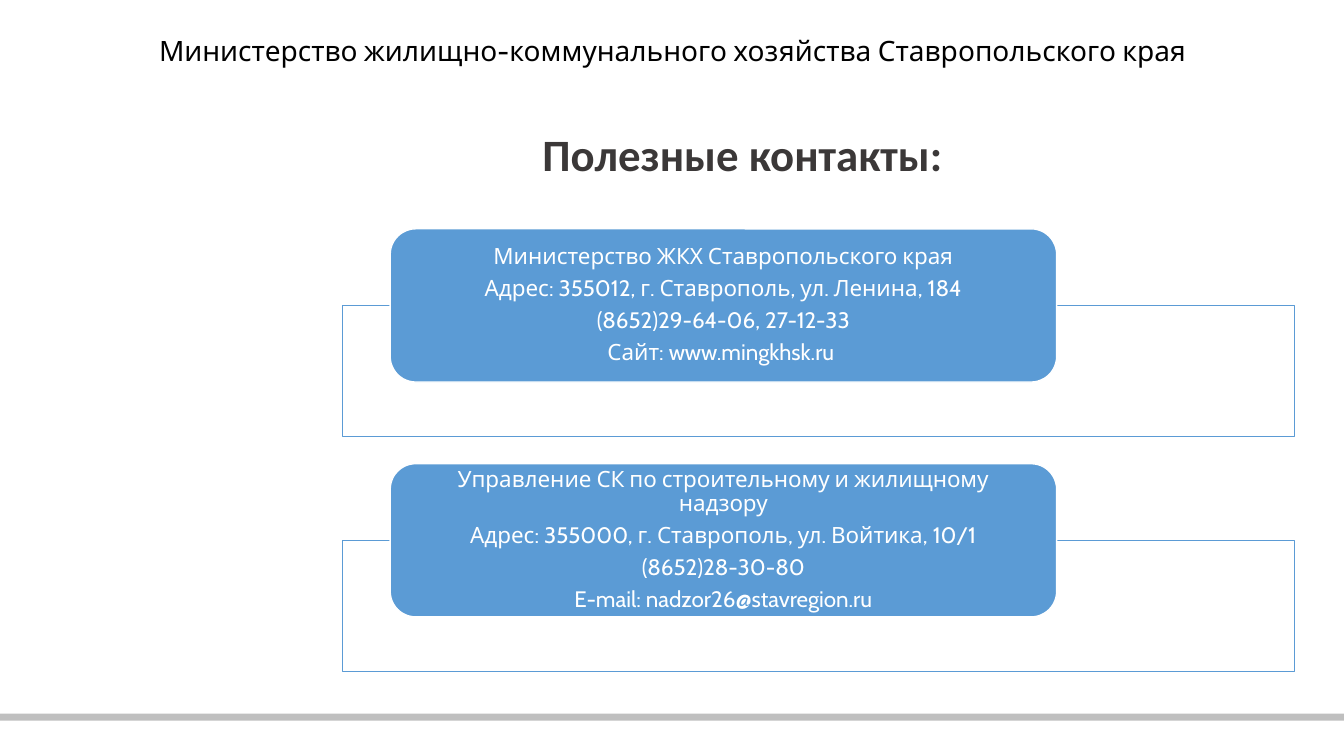
from lxml import etree
from pptx import Presentation
from pptx.dml.color import RGBColor
from pptx.enum import shapes as kinds, text as txt
from pptx.oxml.ns import qn
from pptx.util import Inches, Pt

BLACK = RGBColor(0x00, 0x00, 0x00)
WHITE = RGBColor(0xFF, 0xFF, 0xFF)
BLUE = RGBColor(0x5B, 0x9B, 0xD5)
GREY = RGBColor(0xBF, 0xBF, 0xBF)
DARK = RGBColor(0x3B, 0x38, 0x38)
RECT = kinds.MSO_SHAPE.RECTANGLE
ROUND = kinds.MSO_SHAPE.ROUNDED_RECTANGLE

CARDS = [
    ["Министерство ЖКХ Ставропольского края",
     "Адрес: 355012, г. Ставрополь, ул. Ленина, 184",
     "(8652)29-64-06, 27-12-33",
     "Сайт: www.mingkhsk.ru "],
    ["Управление СК по строительному и жилищному надзору",
     "Адрес: 355000, г. Ставрополь, ул. Войтика, 10/1",
     "(8652)28-30-80",
     "E-mail: nadzor26@stavregion.ru"],
]
TOP = 2.27
STEP = 2.33


def add_line(par, words, font, size, color, bold=False):
    par.alignment = txt.PP_ALIGN.CENTER
    run = par.add_run()
    run.text = words
    run.font.name = font
    run.font.size = Pt(size)
    run.font.bold = bold
    run.font.color.rgb = color


def add_title(slide, box, words, font, size, color, bold=False, space=1.0):
    frame = slide.shapes.add_textbox(*map(Inches, box)).text_frame
    frame.word_wrap = True
    frame.vertical_anchor = txt.MSO_ANCHOR.MIDDLE
    par = frame.paragraphs[0]
    par.line_spacing = space
    add_line(par, words, font, size, color, bold)


def add_block(slide, kind, box, fill, line=None):
    block = slide.shapes.add_shape(kind, *map(Inches, box))
    block.shadow.inherit = False
    block.fill.solid()
    block.fill.fore_color.rgb = fill
    if line is None:
        block.line.fill.background()
    else:
        block.line.color.rgb = line
        block.line.width = Pt(1)
    return block


def add_card(slide, top, lines):
    frame = add_block(slide, RECT, (3.4, top + 0.76, 9.44, 1.3), WHITE, BLUE)
    tint = frame.fill._xPr.find(qn("a:solidFill"))[0]
    etree.SubElement(tint, qn("a:alpha"), val="90000")

    label = add_block(slide, ROUND, (3.87, top, 6.61, 1.52), BLUE, WHITE)
    body = label.text_frame
    body.word_wrap = True
    body.vertical_anchor = txt.MSO_ANCHOR.MIDDLE
    body.margin_left = body.margin_right = Inches(0.25)
    body.margin_top = body.margin_bottom = 0
    for i, words in enumerate(lines):
        par = body.add_paragraph() if i else body.paragraphs[0]
        par.line_spacing = 0.9
        par.space_after = Pt(5.6)
        add_line(par, words, "Cabin", 16, WHITE)


def main():
    deck = Presentation()
    deck.slide_width = Inches(13.33)
    deck.slide_height = Inches(7.5)
    slide = deck.slides.add_slide(deck.slide_layouts[6])
    add_title(slide, (0.92, 0.3, 11.5, 0.44),
              "Министерство жилищно-коммунального хозяйства Ставропольского края",
              "Cabin", 20, BLACK, space=0.9)
    add_block(slide, RECT, (0, 7.08, 13.33, 0.07), GREY)
    add_title(slide, (3.71, 1.2, 7.31, 0.64), "Полезные контакты:",
              "Calibri", 32, DARK, bold=True)
    for i, lines in enumerate(CARDS):
        add_card(slide, TOP + i * STEP, lines)
    deck.save("out.pptx")


if __name__ == "__main__":
    main()
